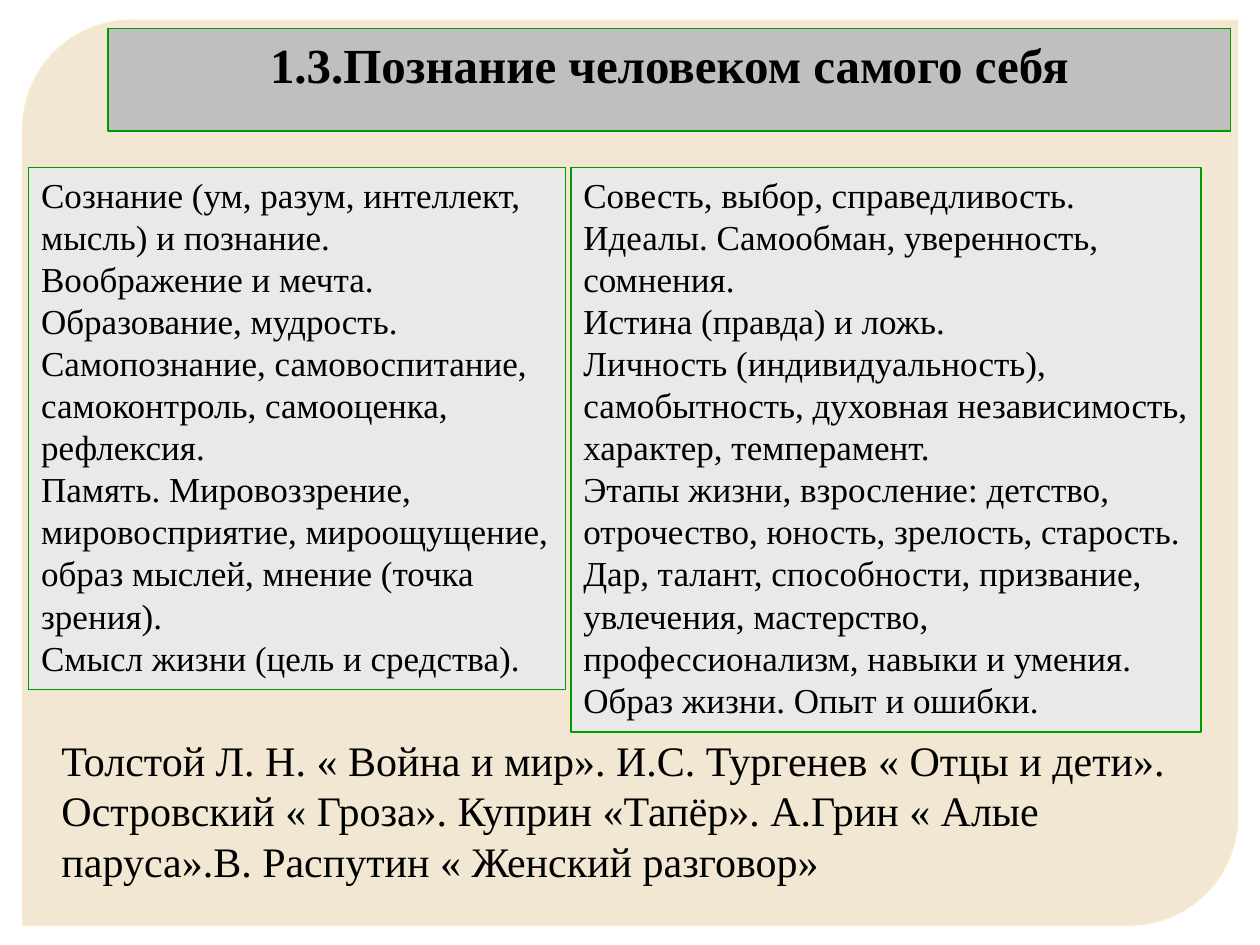
from dataclasses import dataclass

import pptx
import pptx.dml.color
import pptx.enum.shapes
import pptx.enum.text
import pptx.oxml
import pptx.oxml.ns
import pptx.util
from pptx.util import Cm


@dataclass(frozen=True)
class Theme:
    font: str = "Times New Roman"
    text: str = "000000"
    backdrop: str = "EBDBBC"
    backdrop_line: str = "FBE8C6"
    heading_fill: str = "BFBFBF"
    panel_fill: str = "EAE8E8"
    border: str = "009900"
    heading_size: int = 28
    panel_size: int = 20
    books_size: int = 24


THEME = Theme()
SHAPES = pptx.enum.shapes.MSO_SHAPE
ALIGN = pptx.enum.text.PP_ALIGN

HEADING = "1.3.Познание человеком самого себя"
MIND = [
    "Сознание (ум, разум, интеллект, мысль) и познание.",
    "Воображение и мечта. Образование, мудрость. Самопознание, "
    "самовоспитание, самоконтроль, самооценка, рефлексия.",
    "Память. Мировоззрение, мировосприятие, мироощущение, "
    "образ мыслей, мнение (точка зрения).",
    "Смысл жизни (цель и средства).",
]
PERSONALITY = [
    "Совесть, выбор, справедливость. Идеалы. Самообман, уверенность, сомнения.",
    "Истина (правда) и ложь.",
    "Личность (индивидуальность), самобытность, духовная независимость, "
    "характер, темперамент.",
    "Этапы жизни, взросление: детство, отрочество, юность, зрелость, старость.",
    "Дар, талант, способности, призвание, увлечения, мастерство, "
    "профессионализм, навыки и умения. Образ жизни. Опыт и ошибки.",
]
BOOKS = [
    "Толстой Л. Н. « Война и мир». И.С. Тургенев « Отцы и дети». "
    "Островский « Гроза». Куприн «Тапёр». А.Грин « Алые паруса».В. Распутин "
    "« Женский разговор»"
]


def rgb(value):
    return pptx.dml.color.RGBColor.from_string(value)


def apply_format(target, values):
    for name, value in values.items():
        setattr(target, name, value)


def set_opacity(fill_parent, percent):
    color = fill_parent.find(".//" + pptx.oxml.ns.qn("a:srgbClr"))
    alpha = pptx.oxml.parse_xml(
        f'<a:alpha {pptx.oxml.ns.nsdecls("a")} val="{percent * 1000}"/>'
    )
    color.append(alpha)


def add_filled_shape(slide, kind, box, fill, line, width):
    shape = slide.shapes.add_shape(kind, *map(Cm, box))
    shape.shadow.inherit = False
    shape.fill.solid()
    shape.fill.fore_color.rgb = rgb(fill)
    shape.line.color.rgb = rgb(line)
    shape.line.width = pptx.util.Pt(width)
    return shape


def write_text(shape, lines, size, alignment=ALIGN.LEFT, bold=False):
    frame = shape.text_frame
    apply_format(frame, {
        "word_wrap": True,
        "vertical_anchor": pptx.enum.text.MSO_ANCHOR.TOP,
    })
    frame.text = "\n".join(lines)
    font_format = {"name": THEME.font, "size": pptx.util.Pt(size), "bold": bold}
    for paragraph in frame.paragraphs:
        paragraph.alignment = alignment
        for run in paragraph.runs:
            apply_format(run.font, font_format)
            run.font.color.rgb = rgb(THEME.text)


def add_backdrop(slide, box):
    shape = add_filled_shape(slide, SHAPES.ROUND_2_DIAG_RECTANGLE, box,
                             THEME.backdrop, THEME.backdrop_line, 0.87)
    shape.adjustments[0] = 0.12
    shape.adjustments[1] = 0
    properties = shape.fill.fore_color and shape.element.spPr
    set_opacity(properties.find(pptx.oxml.ns.qn("a:solidFill")), 65)
    set_opacity(properties.find(pptx.oxml.ns.qn("a:ln")), 88)


def add_heading(slide, box):
    shape = add_filled_shape(slide, SHAPES.RECTANGLE, box,
                             THEME.heading_fill, THEME.border, 0.75)
    write_text(shape, [HEADING], THEME.heading_size, ALIGN.CENTER, bold=True)


def add_panel(slide, box, lines):
    shape = add_filled_shape(slide, SHAPES.RECTANGLE, box,
                             THEME.panel_fill, THEME.border, 0.75)
    write_text(shape, lines, THEME.panel_size)


def add_panels(slide, left, top):
    """Two topic panels side by side, from the given corner."""
    left_width, right_width, gap = 10.82, 12.7, 0.11
    add_panel(slide, (left, top, left_width, 10.52), MIND)
    add_panel(slide, (left + left_width + gap, top, right_width, 11.38),
              PERSONALITY)


def add_books(slide, box):
    write_text(slide.shapes.add_textbox(*map(Cm, box)), BOOKS, THEME.books_size)


def main():
    presentation = pptx.Presentation()
    apply_format(presentation, {"slide_width": Cm(25.4), "slide_height": Cm(19.05)})
    slide = presentation.slides.add_slide(presentation.slide_layouts[6])

    # Rounded backdrop
    add_backdrop(slide, (0.46, 0.41, 24.49, 18.24))
    # Heading bar
    add_heading(slide, (2.18, 0.58, 22.63, 2.06))
    # Topic panels
    add_panels(slide, 0.58, 3.38)
    # Books to cite
    add_books(slide, (0.99, 14.68, 22.81, 3.33))

    presentation.save("out.pptx")


if __name__ == "__main__":
    main()
